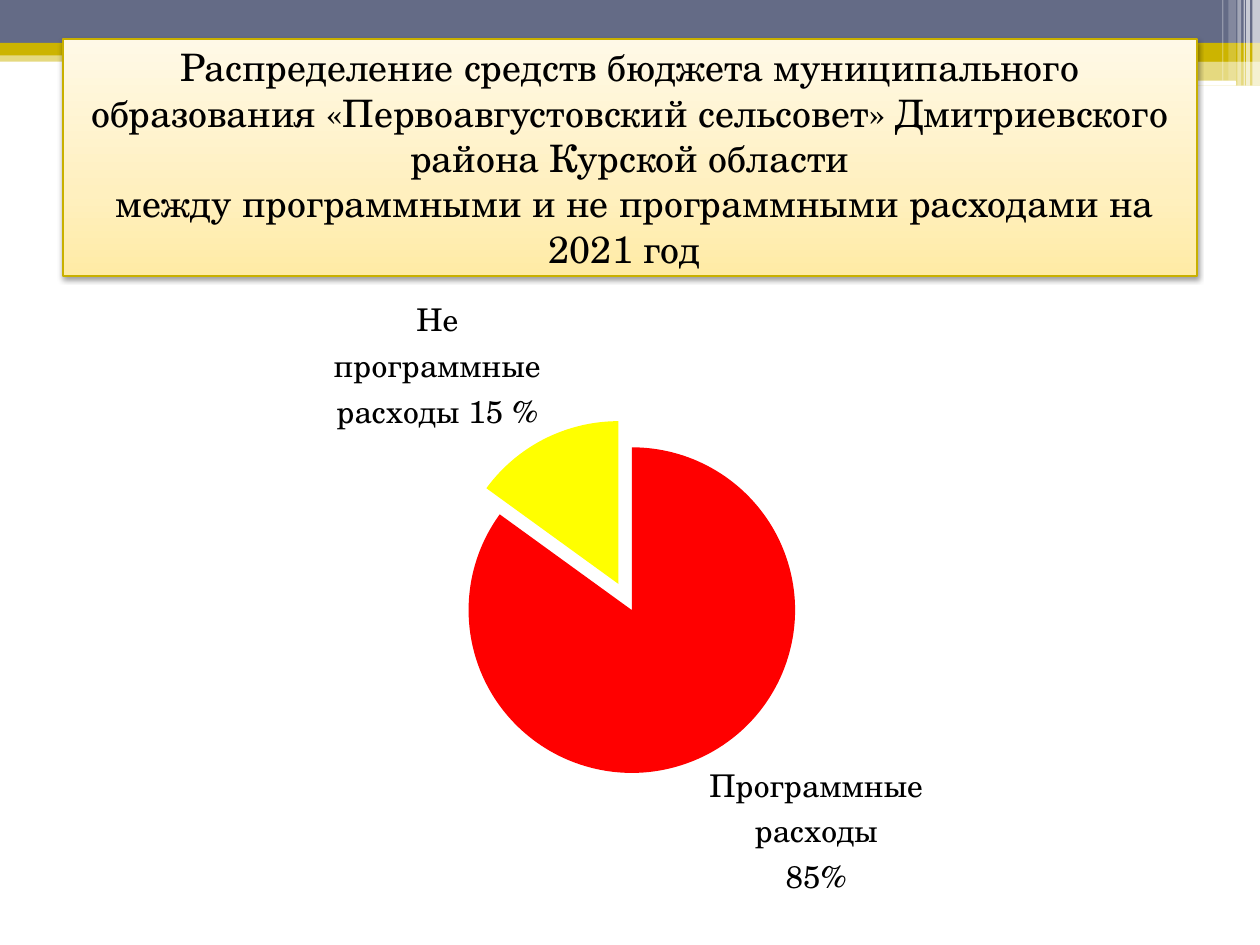
from pptx import Presentation
from pptx.chart.data import CategoryChartData
from pptx.dml.color import RGBColor
from pptx.enum.chart import XL_CHART_TYPE as ChartType, XL_LABEL_POSITION as LabelPosition
from pptx.enum.shapes import MSO_SHAPE as Shape
from pptx.enum.text import MSO_ANCHOR as Anchor, PP_ALIGN as Align
from pptx.oxml import parse_xml
from pptx.oxml.ns import nsdecls, qn
from pptx.util import Inches, Pt

FONT = "TeX Gyre Schola"


def paint(fill, color, opacity=100):
    fill.solid()
    fill.fore_color.rgb = RGBColor.from_string(color)
    if opacity < 100:
        color_element = fill._xPr.find(qn("a:solidFill"))[0]
        color_element.append(parse_xml(f'<a:alpha {nsdecls("a")} val="{opacity * 1000}"/>'))


def format_font(font, size):
    for name, value in {"name": FONT, "size": Pt(size), "bold": False}.items():
        setattr(font, name, value)
    paint(font.fill, "000000")


presentation = Presentation()
presentation.slide_width = Inches(10)
presentation.slide_height = Inches(7.5)
slide = presentation.slides.add_slide(presentation.slide_layouts[5])
paint(slide.background.fill, "FFFFFF")

bands = [
    (0, 0.4, 10, 0.09, "CCB400", 50),
    (0, 0, 10, 0.34, "646B86", 100),
    (0, 0.34, 10, 0.1, "CCB400", 100),
    (5.92, 0.39, 4.08, 0.1, "CCB400", 100),
    (5.92, 0.48, 4.08, 0.2, "CCB400", 50),
]
stripes = [
    (9.94, 0, 0.06, 0.68, "FFFFFF", 65),
    (9.89, 0, 0.03, 0.68, "FFFFFF", 65),
    (9.87, 0, 0.01, 0.68, "FFFFFF", 60),
    (9.82, 0, 0.03, 0.68, "FFFFFF", 40),
    (9.75, 0, 0.06, 0.64, "FFFFFF", 20),
    (9.7, 0, 0.01, 0.64, "FFFFFF", 30),
]
rounded_bars = [
    (5.91, 0.54, 3.35, 0.03, "FFFFFF", 100),
    (8.06, 0.64, 1.75, 0.04, "FFFFFF", 100),
]
for kind, group in (
    (Shape.RECTANGLE, bands),
    (Shape.ROUNDED_RECTANGLE, rounded_bars),
    (Shape.RECTANGLE, stripes),
):
    for left, top, width, height, color, opacity in group:
        shape = slide.shapes.add_shape(kind, Inches(left), Inches(top), Inches(width), Inches(height))
        paint(shape.fill, color, opacity)
        shape.line.fill.background()
        shape.shadow.inherit = False

title = slide.shapes.title
title.element.getparent().append(title.element)
title_box = {"left": 0.5, "top": 0.31, "width": 9, "height": 1.88}
for name, value in title_box.items():
    setattr(title, name, Inches(value))
stops = "".join(
    f'<a:gs pos="{position * 1000}"><a:srgbClr val="{color}"/></a:gs>'
    for position, color in ((0, "FFEBA5"), (35, "FFF0BF"), (100, "FFF9E7"))
)
properties = title.element.spPr
properties.append(parse_xml(
    f'<a:gradFill {nsdecls("a")} rotWithShape="1"><a:gsLst>{stops}</a:gsLst>'
    '<a:lin ang="16200000" scaled="0"/></a:gradFill>'
))
paint(title.line.fill, "C8B000")
title.line.width = Pt(0.75)
properties.append(parse_xml(
    f'<a:effectLst {nsdecls("a")}><a:outerShdw blurRad="{Pt(3.1)}" dist="{Pt(1.6)}" '
    'dir="5400000" rotWithShape="0"><a:srgbClr val="000000"><a:alpha val="38000"/>'
    '</a:srgbClr></a:outerShdw></a:effectLst>'
))
frame = title.text_frame
frame.word_wrap = True
frame.vertical_anchor = Anchor.MIDDLE
paragraph = frame.paragraphs[0]
paragraph.alignment = Align.CENTER
title_lines = [
    "Распределение средств бюджета муниципального образования "
    "«Первоавгустовский сельсовет» Дмитриевского района Курской области",
    " между программными и не программными расходами на 2021 год ",
]
for index, line in enumerate(title_lines):
    if index:
        paragraph.add_line_break()
    run = paragraph.add_run()
    run.text = line
    format_font(run.font, 21.6)

chart_data = CategoryChartData(number_format="0.00")
chart_data.categories = ["Программные расходы", "Не программные расходы"]
chart_data.add_series("Series 1", (85, 15))
chart = slide.shapes.add_chart(
    ChartType.PIE, Inches(0.47), Inches(2.34), Inches(9), Inches(4.8), chart_data
).chart
chart.has_legend = False
chart.has_title = False
format_font(chart.font, 18)
plot = chart.plots[0]
plot.vary_by_categories = True

plot_area = chart.element.find(".//" + qn("c:plotArea"))
for old_layout in plot_area.findall(qn("c:layout")):
    plot_area.remove(old_layout)
plot_area.insert(0, parse_xml(
    f'<c:layout {nsdecls("c")}><c:manualLayout><c:layoutTarget val="inner"/>'
    '<c:xMode val="edge"/><c:yMode val="edge"/><c:x val="0.36"/><c:y val="0.25"/>'
    '<c:w val="0.29"/><c:h val="0.54"/></c:manualLayout></c:layout>'
))

slices = [
    ("FF0000", ["Программные", "расходы", "85%"]),
    ("FFFF00", ["Не", "программные", "расходы 15 %"]),
]
for index, (color, label_lines) in enumerate(slices):
    point = plot.series[0].points[index]
    paint(point.format.fill, color)
    point.format.line.fill.background()
    label_frame = point.data_label.text_frame
    for line_index, line in enumerate(label_lines):
        paragraph = label_frame.add_paragraph() if line_index else label_frame.paragraphs[0]
        run = paragraph.add_run()
        run.text = line
        format_font(run.font, 18)
    point.data_label.position = LabelPosition.OUTSIDE_END

exploded_point = plot.series[0]._element.findall(qn("c:dPt"))[1]
exploded_point.find(qn("c:idx")).addnext(parse_xml(f'<c:explosion {nsdecls("c")} val="18"/>'))

presentation.save("out.pptx")
